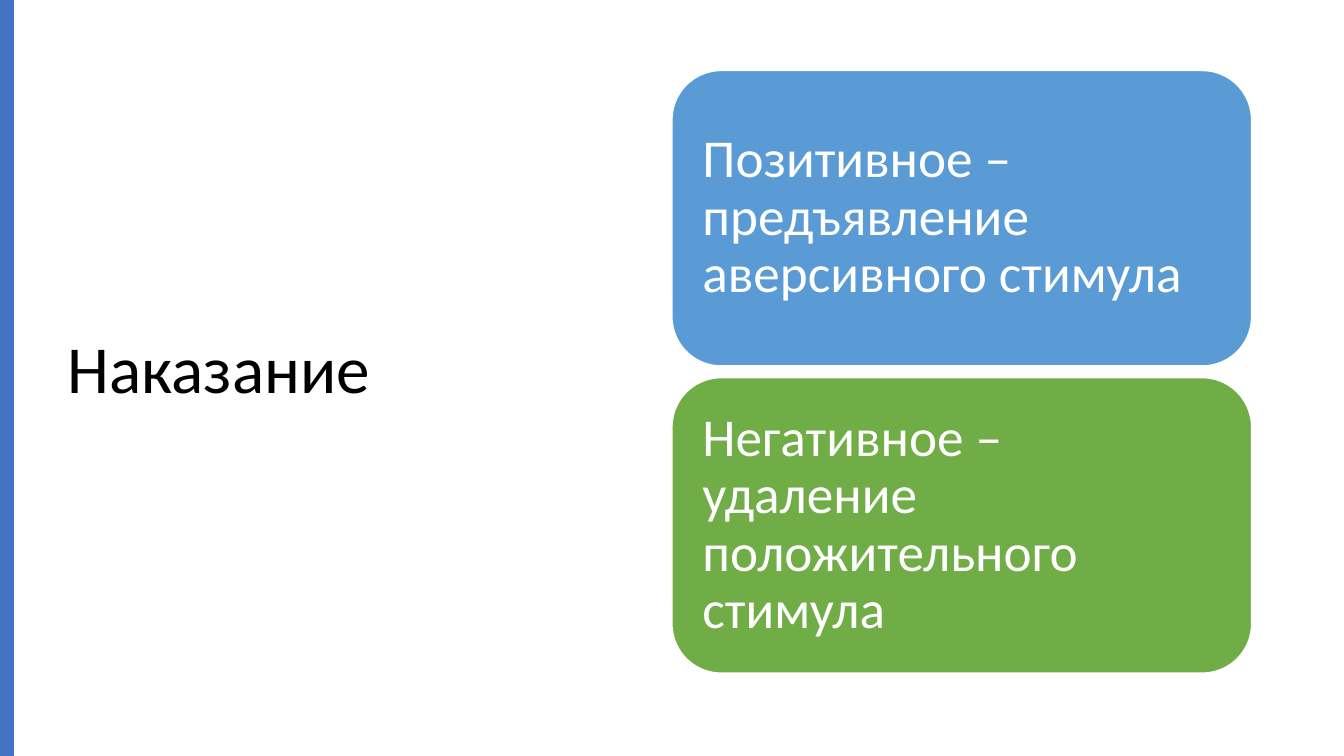
from dataclasses import dataclass

from pptx import Presentation
from pptx.dml import color
from pptx.enum import shapes, text
from pptx.util import Pt


@dataclass(frozen=True)
class Theme:
    font: str = "Calibri"
    head: int = 48
    body: int = 38
    ink: str = "000000"
    white: str = "FFFFFF"
    bar: str = "4472C4"
    blue: str = "5B9BD5"
    green: str = "70AD47"


class Deck:
    def __init__(self, theme):
        self.theme = theme
        self.file = Presentation()
        self.file.slide_width = Pt(960)
        self.file.slide_height = Pt(540)
        self.slide = self.file.slides.add_slide(self.file.slide_layouts[6])

    def style(self, item, values):
        for name, value in values.items():
            setattr(item, name, value)

    def label(self, shape, words, size, tint, inset):
        frame = shape.text_frame
        self.style(frame, {
            "word_wrap": True,
            "vertical_anchor": text.MSO_ANCHOR.MIDDLE,
            "margin_left": Pt(inset),
            "margin_right": Pt(inset),
            "margin_top": Pt(inset),
            "margin_bottom": Pt(inset),
        })
        line = frame.paragraphs[0]
        self.style(line, {
            "text": words,
            "alignment": text.PP_ALIGN.LEFT,
            "line_spacing": 0.9,
        })
        self.style(line.font, {"name": self.theme.font, "size": Pt(size)})
        line.font.color.rgb = color.RGBColor.from_string(tint)

    def block(self, kind, box, fill):
        shape = self.slide.shapes.add_shape(kind, *map(Pt, box))
        shape.shadow.inherit = False
        shape.fill.solid()
        shape.fill.fore_color.rgb = color.RGBColor.from_string(fill)
        shape.line.fill.background()
        return shape

    def title(self, words, box):
        shape = self.slide.shapes.add_textbox(*map(Pt, box))
        self.label(shape, words, self.theme.head, self.theme.ink, 7.2)

    def bar(self, box):
        self.block(shapes.MSO_SHAPE.RECTANGLE, box, self.theme.bar)

    def card(self, words, box, fill):
        shape = self.block(shapes.MSO_SHAPE.ROUNDED_RECTANGLE, box, fill)
        shape.line.color.rgb = color.RGBColor.from_string(self.theme.white)
        shape.line.width = Pt(1)
        self.label(shape, words, self.theme.body, self.theme.white, 11.5)


def main():
    theme = Theme()
    deck = Deck(theme)
    deck.title("Наказание", (41, 49, 408, 433.5))
    deck.bar((0, 0, 10, 540))
    cards = [
        ("Позитивное – предъявление аверсивного стимула", theme.blue),
        ("Негативное – удаление положительного стимула", theme.green),
    ]
    for row, (words, fill) in enumerate(cards):
        deck.card(words, (480, 50.4 + row * 219.4, 414, 211), fill)
    deck.file.save("out.pptx")


if __name__ == "__main__":
    main()
